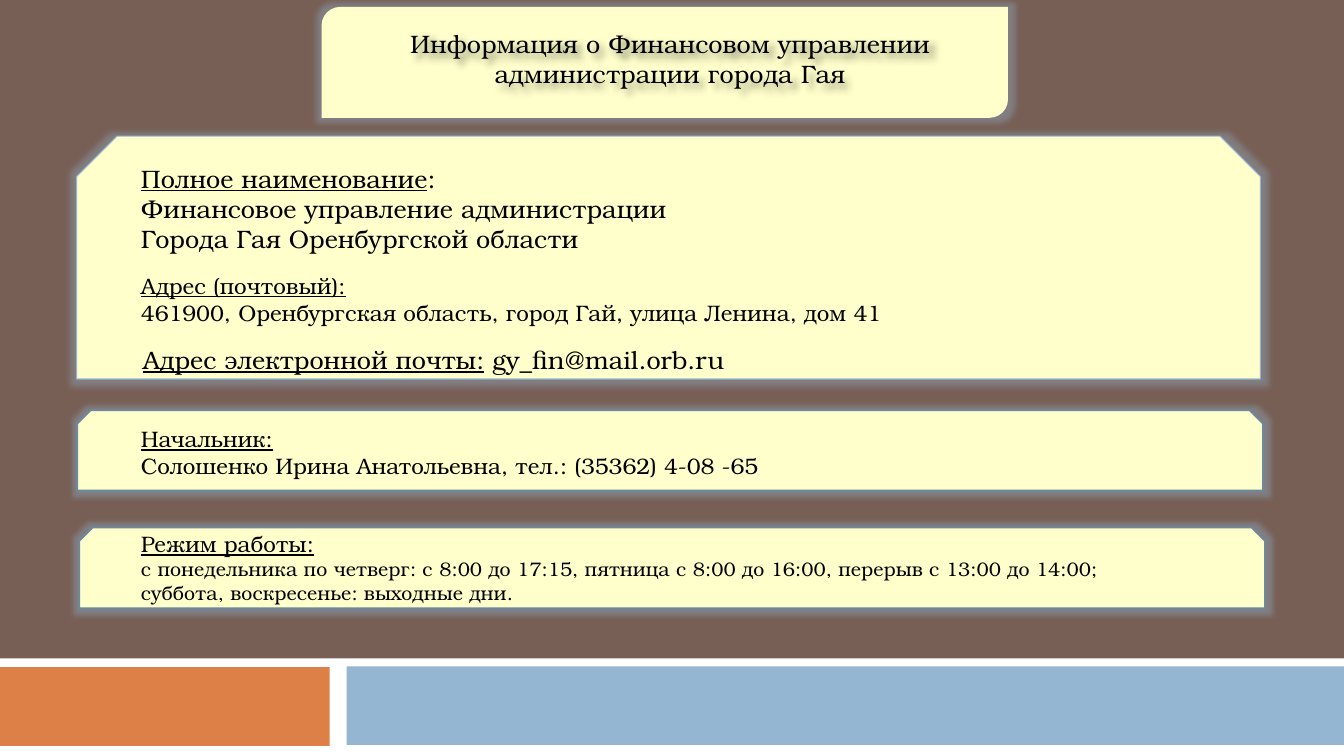
from dataclasses import dataclass
from typing import NamedTuple

from lxml.etree import SubElement
from pptx import Presentation
from pptx.dml.color import RGBColor
from pptx.enum.shapes import MSO_SHAPE
from pptx.enum.text import MSO_ANCHOR, MSO_AUTO_SIZE, PP_ALIGN
from pptx.oxml.ns import qn
from pptx.shapes.autoshape import Shape
from pptx.slide import Slide
from pptx.util import Pt

FONT = "TeX Gyre Bonum"
BROWN = RGBColor(0x77, 0x5F, 0x55)
WHITE = RGBColor(0xFF, 0xFF, 0xFF)
ORANGE = RGBColor(0xDD, 0x80, 0x47)
BLUE = RGBColor(0x94, 0xB6, 0xD2)
STEEL = RGBColor(0x6D, 0x87, 0x9B)
CREAM = RGBColor(0xFF, 0xFF, 0xCC)
BLACK = RGBColor(0, 0, 0)


class Box(NamedTuple):
    left: float
    top: float
    width: float
    height: float


class Run(NamedTuple):
    text: str
    size: float
    underline: bool = False


@dataclass
class Panel:
    box: Box
    fill: RGBColor
    kind: MSO_SHAPE = MSO_SHAPE.RECTANGLE
    line: RGBColor | None = None
    line_width: float = 0
    glow: bool = False


@dataclass
class Entry:
    box: Box
    paragraphs: list[list[Run]]


SNIPPED = MSO_SHAPE.SNIP_2_SAME_RECTANGLE
PANELS = [
    Panel(Box(0, 470.2, 960, 69.8), WHITE),
    Panel(Box(-0.7, 476.6, 236.2, 56.2), ORANGE),
    Panel(Box(247.7, 475.9, 712.3, 56.2), BLUE),
    Panel(Box(56.5, 376.7, 847.2, 58), CREAM, SNIPPED, STEEL, 1.5, True),
    Panel(Box(55.1, 293, 847.2, 57.6), CREAM, SNIPPED, STEEL, 1.5, True),
    Panel(Box(54.7, 97.2, 845.6, 173.5), CREAM, SNIPPED, BLUE, 0.79, True),
    Panel(Box(229.7, 5, 490.3, 79.2), CREAM,
          MSO_SHAPE.ROUND_2_DIAG_RECTANGLE, glow=True),
]

TITLE_BOX = Box(-1.4, 16.6, 960, 51)
TITLE = [
    [Run("Информация о Финансовом управлении", 18)],
    [Run("администрации города Гая", 18)],
]

ENTRIES = [
    Entry(Box(93.6, 113, 800, 72), [
        [Run("Полное наименование", 18, True), Run(":", 18)],
        [Run("Финансовое управление администрации", 18)],
        [Run("Города Гая Оренбургской области", 18)],
    ]),
    Entry(Box(93.6, 190.8, 800, 46), [
        [Run("Адрес (почтовый):", 16, True)],
        [Run("461900, Оренбургская область, город Гай, улица Ленина, дом 41", 16)],
    ]),
    Entry(Box(95, 242.6, 800, 29), [
        [Run("Адрес электронной почты:", 18, True), Run(" gy_fin@mail.orb.ru", 18)],
    ]),
    Entry(Box(93.6, 300.2, 800, 46), [
        [Run("Начальник:", 16, True)],
        [Run("Солошенко Ирина Анатольевна, тел.: (35362) 4-08 -65", 16)],
    ]),
    Entry(Box(93.6, 375.4, 800, 60.5), [
        [Run("Режим работы:", 16, True)],
        [Run("с понедельника по четверг: с 8:00 до 17:15, пятница с 8:00 до 16:00, "
             "перерыв с 13:00 до 14:00;", 14)],
        [Run("суббота, воскресенье: выходные дни.", 14)],
    ]),
]


def in_points(box: Box) -> list[Pt]:
    return [Pt(length) for length in box]


def add_effect(shape: Shape, name: str, color: RGBColor, opacity: int,
               **lengths: int) -> None:
    """Give the shape a glow or an outer shadow; opacity is in percent."""
    shape.shadow.inherit = False
    effects = shape.element.spPr.find(qn("a:effectLst"))
    effect = SubElement(effects, qn(name),
                        {key: str(value) for key, value in lengths.items()})
    tint = SubElement(effect, qn("a:srgbClr"), val=str(color))
    SubElement(tint, qn("a:alpha"), val=str(opacity * 1000))


def add_panel(slide: Slide, panel: Panel) -> None:
    shape = slide.shapes.add_shape(panel.kind, *in_points(panel.box))
    shape.shadow.inherit = False
    shape.fill.solid()
    shape.fill.fore_color.rgb = panel.fill
    if panel.line is None:
        shape.line.fill.background()
    else:
        shape.line.color.rgb = panel.line
        shape.line.width = Pt(panel.line_width)
    if panel.glow:
        add_effect(shape, "a:glow", BLUE, 35, rad=Pt(8))


def write_text(shape: Shape, paragraphs: list[list[Run]], *,
               align: PP_ALIGN = PP_ALIGN.LEFT, color: RGBColor = BLACK) -> None:
    frame = shape.text_frame
    frame.word_wrap = True
    frame.auto_size = MSO_AUTO_SIZE.NONE
    frame.vertical_anchor = MSO_ANCHOR.TOP
    for index, runs in enumerate(paragraphs):
        paragraph = frame.add_paragraph() if index else frame.paragraphs[0]
        paragraph.alignment = align
        for part in runs:
            run = paragraph.add_run()
            run.text = part.text
            run.font.name = FONT
            run.font.size = Pt(part.size)
            run.font.underline = part.underline
            run.font.color.rgb = color


def add_title(slide: Slide) -> None:
    title = slide.shapes.title
    title.left, title.top, title.width, title.height = in_points(TITLE_BOX)
    write_text(title, TITLE, align=PP_ALIGN.CENTER)
    add_effect(title, "a:outerShdw", BLACK, 40,
               blurRad=Pt(4), dist=Pt(4), dir=45 * 60000)
    title.element.getparent().append(title.element)


def main() -> None:
    deck = Presentation()
    deck.slide_width, deck.slide_height = Pt(960), Pt(540)
    slide = deck.slides.add_slide(deck.slide_layouts.get_by_name("Title Only"))
    slide.background.fill.solid()
    slide.background.fill.fore_color.rgb = BROWN

    for panel in PANELS:
        add_panel(slide, panel)
    add_title(slide)
    for entry in ENTRIES:
        write_text(slide.shapes.add_textbox(*in_points(entry.box)), entry.paragraphs)

    deck.save("out.pptx")


if __name__ == "__main__":
    main()
